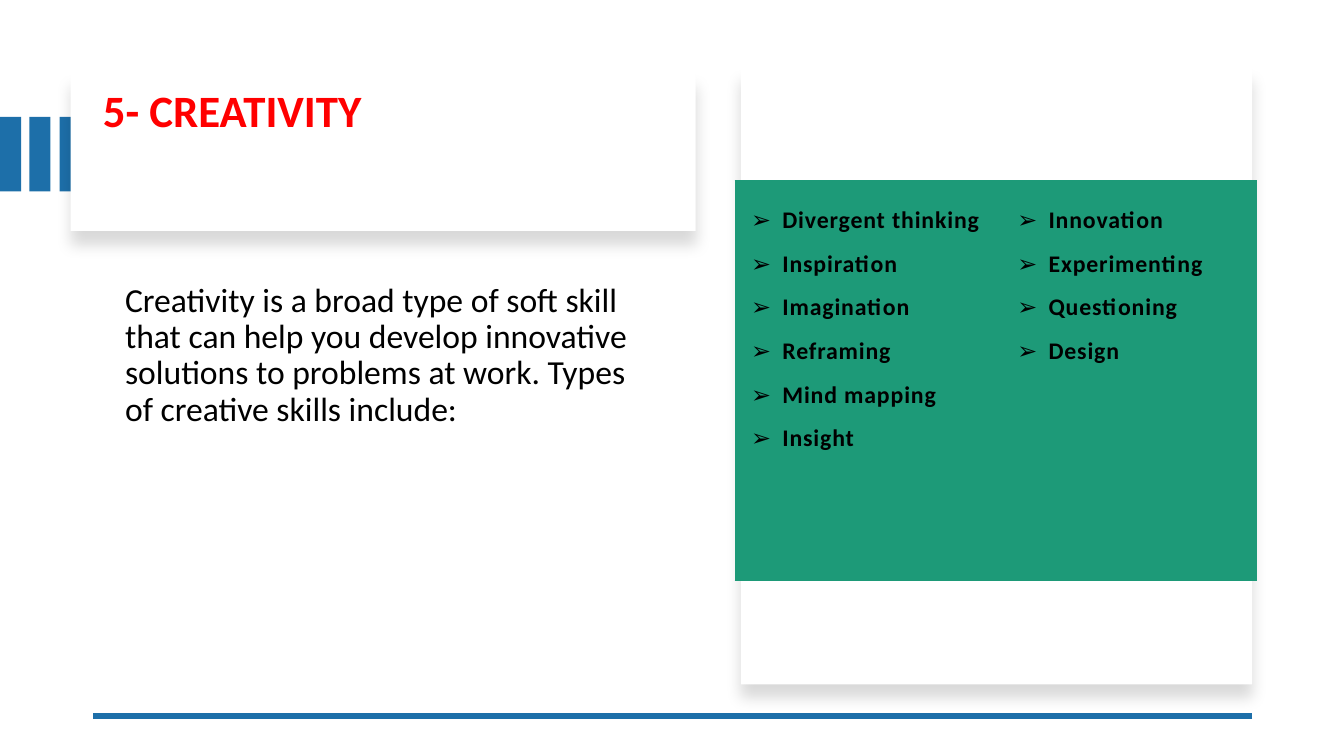
"""Build the creativity slide: a title card, a definition and a two-column skills table."""
from lxml import etree
from pptx import Presentation
from pptx.dml.color import RGBColor
from pptx.enum.shapes import MSO_CONNECTOR, MSO_SHAPE
from pptx.enum.text import MSO_ANCHOR, MSO_AUTO_SIZE, PP_ALIGN
from pptx.oxml.ns import qn
from pptx.util import Inches, Pt

RECTANGLE = MSO_SHAPE.RECTANGLE
STRAIGHT = MSO_CONNECTOR.STRAIGHT
LEFT = PP_ALIGN.LEFT
TOP, MIDDLE = MSO_ANCHOR.TOP, MSO_ANCHOR.MIDDLE
NO_AUTOFIT = MSO_AUTO_SIZE.NONE

BLUE, GREEN, RED, BLACK, WHITE = "1D6FA9", "1D9A78", "FF0000", "000000", "FFFFFF"

TITLE = "5- CREATIVITY"
DEFINITION = (
    "Creativity is a broad type of soft skill that can help you develop "
    "innovative solutions to problems at work.\u00a0Types of creative skills include:"
)
SKILLS = [
    ["Divergent thinking", "Inspiration", "Imagination", "Reframing", "Mind mapping", "Insight"],
    ["Innovation", "Experimenting", "Questioning", "Design"],
]

BAR_LEFTS = (0, 0.29, 0.59)
TITLE_CARD = (0.7, 0.72, 6.2, 1.57)
SKILLS_CARD = (7.35, 0.67, 5.07, 6.12)
TITLE_BOX = (0.92, 0.4, 11.5, 1.45)
BODY_BOX = (1.14, 2.76, 5.46, 4.02)
TABLE_BOX = (7.29, 1.79, 5.17, 3.97)
COLUMN_WIDTHS = (2.64, 2.53)
CELL_SIDES = ("lnL", "lnR", "lnT", "lnB")
CELL_MARGINS = {"margin_left": 0.16, "margin_top": 0.11, "margin_right": 0.16, "margin_bottom": 0.11}

TITLE_FONT = {"name": "Calibri", "size": Pt(32), "bold": True}
BODY_FONT = {"name": "Calibri", "size": Pt(24), "bold": False}
SKILL_FONT = {"name": "Calibri", "size": Pt(17), "bold": True}
TITLE_FORMAT = {"alignment": LEFT, "line_spacing": 0.9}
BODY_FORMAT = {"alignment": LEFT, "line_spacing": 0.9, "space_before": Pt(10)}
SKILL_FORMAT = {"alignment": LEFT, "line_spacing": 1.5, "space_before": Pt(0)}


def color(value):
    return RGBColor.from_string(value)


def inches(values):
    return [Inches(value) for value in values]


def apply(target, values):
    for name, value in values.items():
        setattr(target, name, value)


def add_element(parent, tag, **attributes):
    element = etree.SubElement(parent, qn(f"a:{tag}"))
    for name, value in attributes.items():
        element.set(name, str(value))
    return element


def write(paragraph, text, paragraph_format, font_format, text_color):
    run = paragraph.add_run()
    run.text = text
    apply(paragraph, paragraph_format)
    apply(run.font, font_format)
    run.font.color.rgb = color(text_color)
    return run


def set_bullet(paragraph, character=None, indent=0):
    properties = paragraph._p.get_or_add_pPr()
    properties.set("marL", str(Inches(indent)))
    properties.set("indent", str(-Inches(indent)))
    if character:
        add_element(properties, "buFont", typeface="Calibri")
        add_element(properties, "buChar", char=character)
    else:
        add_element(properties, "buNone")


def add_rectangle(slide, box, fill):
    shape = slide.shapes.add_shape(RECTANGLE, *inches(box))
    shape.shadow.inherit = False
    shape.fill.solid()
    shape.fill.fore_color.rgb = color(fill)
    shape.line.fill.background()
    return shape


def add_card(slide, box):
    shape = add_rectangle(slide, box, WHITE)
    effects = shape.element.spPr.find(qn("a:effectLst"))
    shadow = add_element(effects, "outerShdw", blurRad=Pt(11), dist=Pt(10),
                         dir=90 * 60000, algn="t", rotWithShape=0)
    add_element(add_element(shadow, "srgbClr", val=BLACK), "alpha", val=15000)


def add_rule(slide):
    rule = slide.shapes.add_connector(STRAIGHT, *inches((12.42, 7.1, 0.92, 7.1)))
    rule.line.color.rgb = color(BLUE)
    rule.line.width = Pt(4.5)
    add_element(rule.element.spPr, "effectLst")


def fill_cell(cell, skills):
    apply(cell, {name: Inches(value) for name, value in CELL_MARGINS.items()})
    cell.vertical_anchor = TOP
    properties = cell._tc.get_or_add_tcPr()
    for side in CELL_SIDES:
        border = add_element(properties, side, w=Pt(0.5))
        add_element(add_element(border, "solidFill"), "srgbClr", val=GREEN)
    cell.fill.solid()
    cell.fill.fore_color.rgb = color(GREEN)
    for index, skill in enumerate(skills):
        frame = cell.text_frame
        paragraph = frame.add_paragraph() if index else frame.paragraphs[0]
        run = write(paragraph, skill, SKILL_FORMAT, SKILL_FONT, BLACK)
        run.font._element.set("spc", "60")
        set_bullet(paragraph, "➢", 0.31)


def add_skills_table(slide):
    table = slide.shapes.add_table(1, len(SKILLS), *inches(TABLE_BOX)).table
    table.first_row = table.horz_banding = False
    for index, skills in enumerate(SKILLS):
        table.columns[index].width = Inches(COLUMN_WIDTHS[index])
        fill_cell(table.cell(0, index), skills)


def fill_placeholder(slide, shape, box, anchor, text, paragraph_format, font_format, text_color):
    apply(shape, dict(zip(("left", "top", "width", "height"), inches(box))))
    apply(shape.text_frame, {"vertical_anchor": anchor, "word_wrap": True, "auto_size": NO_AUTOFIT})
    paragraph = shape.text_frame.paragraphs[0]
    write(paragraph, text, paragraph_format, font_format, text_color)
    set_bullet(paragraph)
    slide.shapes.element.append(shape.element)


def main():
    presentation = Presentation()
    presentation.slide_width, presentation.slide_height = inches((13.33, 7.5))
    slide = presentation.slides.add_slide(presentation.slide_layouts[1])
    title, body = slide.shapes.title, slide.placeholders[1]
    for left in BAR_LEFTS:
        add_rectangle(slide, (left, 1.16, 0.21, 0.74), BLUE)
    add_card(slide, TITLE_CARD)
    fill_placeholder(slide, body, BODY_BOX, TOP, DEFINITION, BODY_FORMAT, BODY_FONT, BLACK)
    add_card(slide, SKILLS_CARD)
    add_rule(slide)
    add_skills_table(slide)
    fill_placeholder(slide, title, TITLE_BOX, MIDDLE, TITLE, TITLE_FORMAT, TITLE_FONT, RED)
    presentation.save("out.pptx")


if __name__ == "__main__":
    main()
